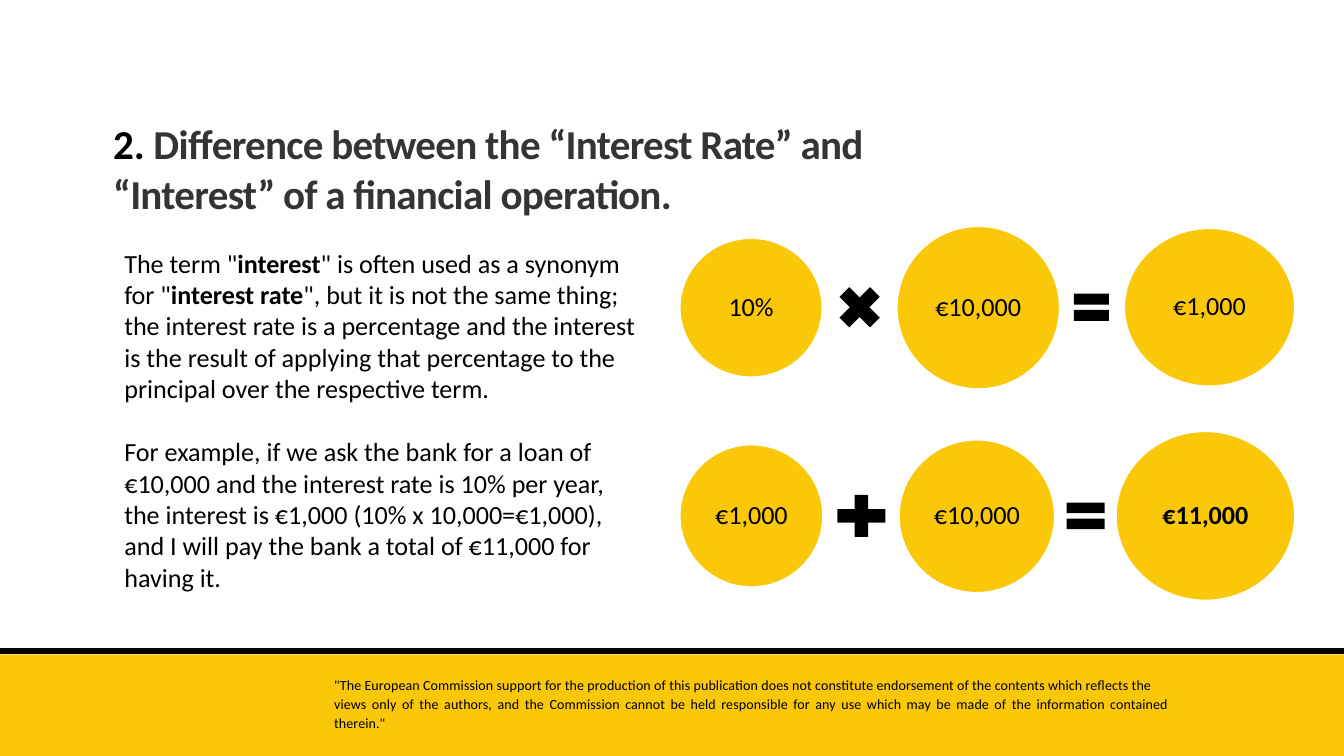
from lxml import etree
from pptx import Presentation
from pptx.dml.color import RGBColor
from pptx.enum.shapes import MSO_CONNECTOR, MSO_SHAPE
from pptx.enum.text import MSO_ANCHOR, MSO_AUTO_SIZE, PP_ALIGN
from pptx.oxml.ns import qn
from pptx.util import Pt

PX = 9525  # EMU per px, 96 px to the inch
COLORS = {name: RGBColor.from_string(value) for name, value in {
    "yellow": "FAC709", "black": "000000", "white": "FFFFFF", "heading": "343433",
}.items()}
FONT = "Calibri"
TIMES, PLUS, EQUALS = MSO_SHAPE.MATH_MULTIPLY, MSO_SHAPE.MATH_PLUS, MSO_SHAPE.MATH_EQUAL
OVAL, RECTANGLE = MSO_SHAPE.OVAL, MSO_SHAPE.RECTANGLE


def px(*lengths):
    return [length * PX for length in lengths]


def set_font(font, size, color="black", bold=False):
    font.name, font.size, font.bold = FONT, Pt(size), bold
    font.color.rgb = COLORS[color]


prs = Presentation()
prs.slide_width, prs.slide_height = px(1920, 1080)
slide = prs.slides.add_slide(prs.slide_layouts[1])
title, body = slide.placeholders

# Footer band
band = slide.shapes.add_shape(RECTANGLE, *px(0, 935, 1920, 145))
band.shadow.inherit = False
band.fill.solid()
band.fill.fore_color.rgb = COLORS["yellow"]
band.line.fill.background()

rule = slide.shapes.add_connector(MSO_CONNECTOR.STRAIGHT, *px(0, 930, 1920, 930))
rule.line.color.rgb = COLORS["black"]
rule.line.width = Pt(6.75)
etree.SubElement(rule._element.spPr, qn("a:effectLst"))

disclaimer = slide.shapes.add_textbox(*px(468, 964, 1212, 84)).text_frame
disclaimer.word_wrap = True
disclaimer.text = (
    '"The European Commission support for the production of this publication does not '
    "constitute endorsement of the contents which reflects the\n"
    "views only of the authors, and the Commission cannot be held responsible for any use "
    'which may be made of the information contained therein."')
for paragraph, spacing in zip(disclaimer.paragraphs, (Pt(16.1), 1.13)):
    paragraph.alignment = PP_ALIGN.JUSTIFY
    paragraph.line_spacing = spacing
    set_font(paragraph.font, 15)
    paragraph.runs[0]._r.get_or_add_rPr().set("spc", "10")

# Title
title.left, title.top, title.width, title.height = px(152, 165, 1296, 152)
title.text_frame.vertical_anchor = MSO_ANCHOR.TOP
title.text_frame.auto_size = MSO_AUTO_SIZE.NONE
heading = title.text_frame.paragraphs[0]
heading.alignment = PP_ALIGN.LEFT
number = heading.add_run()
number.text = "2."
set_font(number.font, 44, bold=True)
topic = heading.add_run()
topic.text = " Difference between the “Interest Rate” and “Interest” of a financial operation."
set_font(topic.font, 44, "heading", bold=True)
topic._r.get_or_add_rPr().set("spc", "-80")

# Explanation: odd parts of each paragraph are bold
explanation = [
    ['The term "', "interest", '" is often used as a synonym for "', "interest rate",
     '", but it is not the same thing; the interest rate is a percentage and the interest is '
     "the result of applying that percentage to the principal over the respective term."],
    ["For example, if we ask the bank for a loan of €10,000 and the interest rate is 10% per "
     "year, the interest is €1,000 (10% x 10,000=€1,000), and I will pay the bank a total of "
     "€11,000 for having it."],
]
body.left, body.top, body.width, body.height = px(168, 348, 752, 553)
body.text_frame.auto_size = MSO_AUTO_SIZE.NONE
for index, parts in enumerate(explanation):
    paragraph = body.text_frame.add_paragraph() if index else body.text_frame.paragraphs[0]
    paragraph.space_before = Pt(34 * index)
    properties = paragraph._p.get_or_add_pPr()
    properties.set("marL", "0")
    properties.set("indent", "0")
    etree.SubElement(properties, qn("a:buNone"))
    for position, part in enumerate(parts):
        run = paragraph.add_run()
        run.text = part
        set_font(run.font, 28, bold=position % 2 == 1)

# Equations: (centre y, [(term or operator, left, width, height)])
equations = [
    (439, [("10%", 971, 204, 199), (TIMES, 1186, 84, 84), ("€10,000", 1281, 233, 233),
           (EQUALS, 1525, 68, 66), ("€1,000", 1606, 244, 226)]),
    (737, [("€1,000", 971, 205, 204), (PLUS, 1184, 93, 82), ("€10,000", 1284, 223, 219),
           (EQUALS, 1514, 74, 64), ("€11,000", 1594, 256, 242)]),
]
for center, parts in equations:
    equation = slide.shapes.add_group_shape()
    for part, left, width, height in parts:
        is_term = isinstance(part, str)
        symbol = equation.shapes.add_shape(
            OVAL if is_term else part, *px(left, center - height // 2, width, height))
        symbol.shadow.inherit = False
        symbol.fill.solid()
        symbol.fill.fore_color.rgb = COLORS["yellow" if is_term else "black"]
        if not is_term:
            symbol.line.fill.background()
            continue
        symbol.line.color.rgb = COLORS["white"]
        symbol.line.width = Pt(2)
        frame = symbol.text_frame
        frame.margin_left = frame.margin_right = frame.margin_top = frame.margin_bottom = 4 * PX
        frame.vertical_anchor = MSO_ANCHOR.MIDDLE
        amount = frame.paragraphs[0]
        amount.text = part
        amount.alignment = PP_ALIGN.CENTER
        amount.line_spacing = 0.9
        set_font(amount.font, 28, bold=part == "€11,000")

prs.save("out.pptx")
